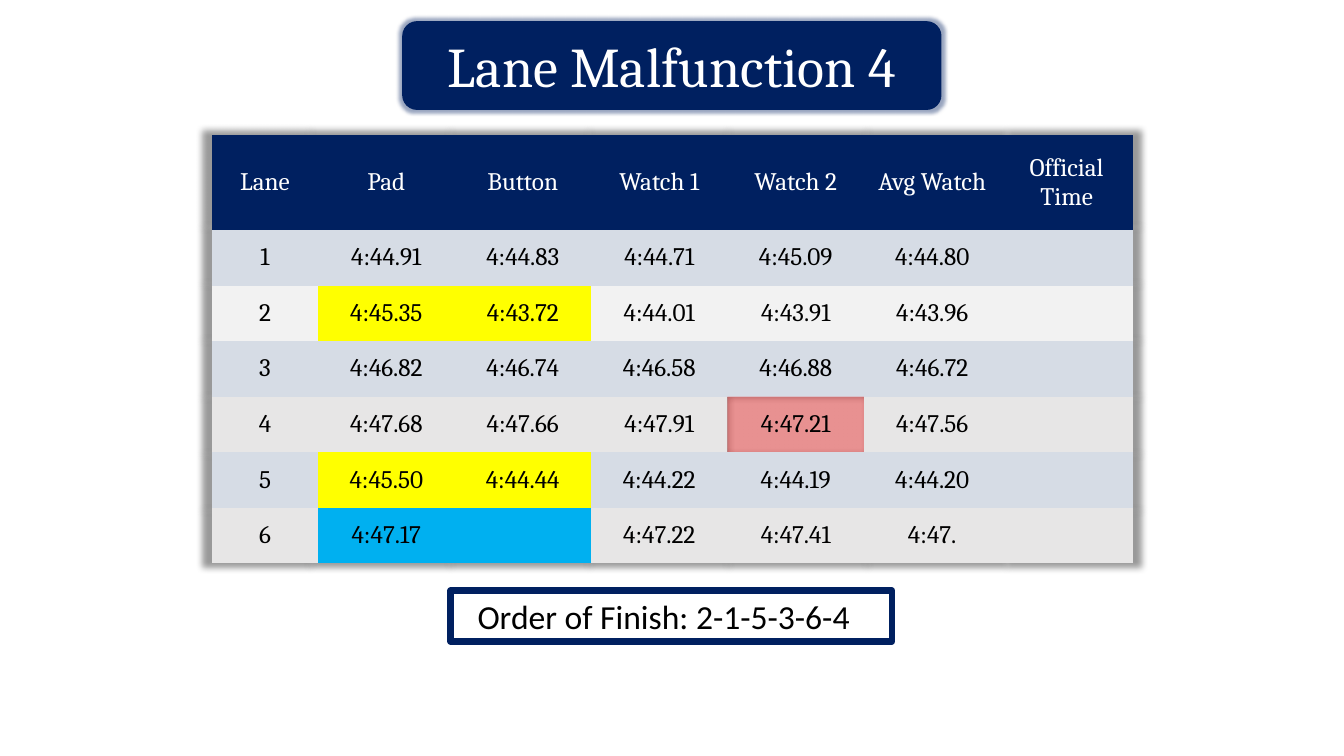
from lxml import etree
from pptx import Presentation
from pptx.dml.color import RGBColor
from pptx.enum.shapes import MSO_SHAPE
from pptx.enum.text import MSO_ANCHOR, PP_ALIGN
from pptx.oxml import parse_xml
from pptx.oxml.ns import nsdecls, qn
from pptx.util import Pt

CENTER = PP_ALIGN.CENTER
MIDDLE = MSO_ANCHOR.MIDDLE
RECTANGLE = MSO_SHAPE.RECTANGLE
ROUNDED = MSO_SHAPE.ROUNDED_RECTANGLE
NO_STYLE_NO_GRID = "{2D5ABB26-0587-4C30-8999-92F81FD0307C}"

THEME = {
    "navy": "002060", "white": "FFFFFF", "black": "000000",
    "odd": "D6DCE5", "even": "E7E6E6", "pale": "F2F2F2",
    "yellow": "FFFF00", "blue": "00B0F0", "red": "FF0000",
    "serif": "Cambria", "sans": "Calibri",
    "title_size": 40, "order_size": 24, "table_size": 18,
}

TITLE = "Lane Malfunction 4"
ORDER = "Order of Finish: 2-1-5-3-6-4"
HEADER = ["Lane", "Pad", "Button", "Watch 1", "Watch 2", "Avg Watch", "Official Time"]
TIMES = [
    ["1", "4:44.91", "4:44.83", "4:44.71", "4:45.09", "4:44.80", ""],
    ["2", "4:45.35", "4:43.72", "4:44.01", "4:43.91", "4:43.96", ""],
    ["3", "4:46.82", "4:46.74", "4:46.58", "4:46.88", "4:46.72", ""],
    ["4", "4:47.68", "4:47.66", "4:47.91", "4:47.21", "4:47.56", ""],
    ["5", "4:45.50", "4:44.44", "4:44.22", "4:44.19", "4:44.20", ""],
    ["6", "4:47.17", "", "4:47.22", "4:47.41", "4:47.", ""],
]
ROW_FILLS = ["navy", "odd", "pale", "odd", "even", "odd", "even"]
HIGHLIGHTS = {  # (row, column): colour
    (2, 1): "yellow", (2, 2): "yellow",
    (4, 4): "red",
    (5, 1): "yellow", (5, 2): "yellow",
    (6, 1): "blue", (6, 2): "blue",
}
RED_ALPHA = 34

COLUMN_WIDTHS = [75.8] + [97.5] * 5 + [94.5]
ROW_HEIGHTS = [67.9] + [39.68] * 6
TABLE_LEFT, TABLE_TOP = 151.4, 96.4
TITLE_BOX = (287.3, 15.1, 385.2, 63.4)
ORDER_BOX = (321.8, 421.9, 315.4, 36.4)

TABLE_SHADOW = f"""<a:effectLst {nsdecls("a")}>
<a:outerShdw blurRad="63500" sx="102000" sy="102000" algn="ctr" rotWithShape="0">
<a:srgbClr val="{THEME["black"]}"><a:alpha val="40000"/></a:srgbClr></a:outerShdw>
</a:effectLst>"""
TITLE_GLOW = f"""<a:glow {nsdecls("a")} rad="63500">
<a:srgbClr val="{THEME["navy"]}"><a:alpha val="40000"/></a:srgbClr></a:glow>"""
TITLE_SHADOW = f"""<a:outerShdw {nsdecls("a")} blurRad="50800" dist="50800" dir="5400000"
algn="ctr" rotWithShape="0"><a:srgbClr val="{THEME["white"]}"/></a:outerShdw>"""


def color(name):
    return RGBColor.from_string(THEME[name])


def paint(fill, name):
    fill.solid()
    fill.fore_color.rgb = color(name)


def write(text_frame, text, font_name, size, color_name):
    text_frame.text = text
    paragraph = text_frame.paragraphs[0]
    paragraph.alignment = CENTER
    paragraph.font.name = THEME[font_name]
    paragraph.font.size = Pt(THEME[size])
    paragraph.font.color.rgb = color(color_name)


def add_box(slide, kind, box, fill_name):
    shape = slide.shapes.add_shape(kind, *map(Pt, box))
    shape.shadow.inherit = False
    paint(shape.fill, fill_name)
    shape.text_frame.word_wrap = True
    shape.text_frame.vertical_anchor = MIDDLE
    return shape


def add_times(slide):
    rows = [HEADER] + TIMES
    frame = slide.shapes.add_table(
        len(rows), len(HEADER), Pt(TABLE_LEFT), Pt(TABLE_TOP),
        Pt(sum(COLUMN_WIDTHS)), Pt(sum(ROW_HEIGHTS)))
    table = frame.table
    properties = table._tbl.tblPr
    properties.find(qn("a:tableStyleId")).text = NO_STYLE_NO_GRID
    properties.insert(0, parse_xml(TABLE_SHADOW))
    for column, width in zip(table.columns, COLUMN_WIDTHS):
        column.width = Pt(width)
    for row, height in zip(table.rows, ROW_HEIGHTS):
        row.height = Pt(height)
    for r, values in enumerate(rows):
        for c, value in enumerate(values):
            cell = table.cell(r, c)
            cell.vertical_anchor = MIDDLE
            fill_name = HIGHLIGHTS.get((r, c), ROW_FILLS[r])
            paint(cell.fill, fill_name)
            if fill_name == "red":
                rgb = cell._tc.tcPr.find(".//" + qn("a:srgbClr"))
                etree.SubElement(rgb, qn("a:alpha"), val=str(RED_ALPHA * 1000))
            write(cell.text_frame, value, "serif", "table_size",
                  "black" if r else "white")


def add_order(slide):
    shape = add_box(slide, RECTANGLE, ORDER_BOX, "white")
    shape.line.color.rgb = color("navy")
    shape.line.width = Pt(4.5)
    shape.text_frame.margin_right = Pt(18)
    write(shape.text_frame, ORDER, "sans", "order_size", "black")


def add_title(slide):
    shape = add_box(slide, ROUNDED, TITLE_BOX, "navy")
    shape.line.fill.background()
    effects = shape._element.spPr.find(qn("a:effectLst"))
    effects.append(parse_xml(TITLE_GLOW))
    effects.append(parse_xml(TITLE_SHADOW))
    write(shape.text_frame, TITLE, "serif", "title_size", "white")


def main():
    presentation = Presentation()
    presentation.slide_width, presentation.slide_height = Pt(960), Pt(540)
    slide = presentation.slides.add_slide(presentation.slide_layouts[6])
    add_times(slide)
    add_order(slide)
    add_title(slide)
    presentation.save("out.pptx")


if __name__ == "__main__":
    main()
